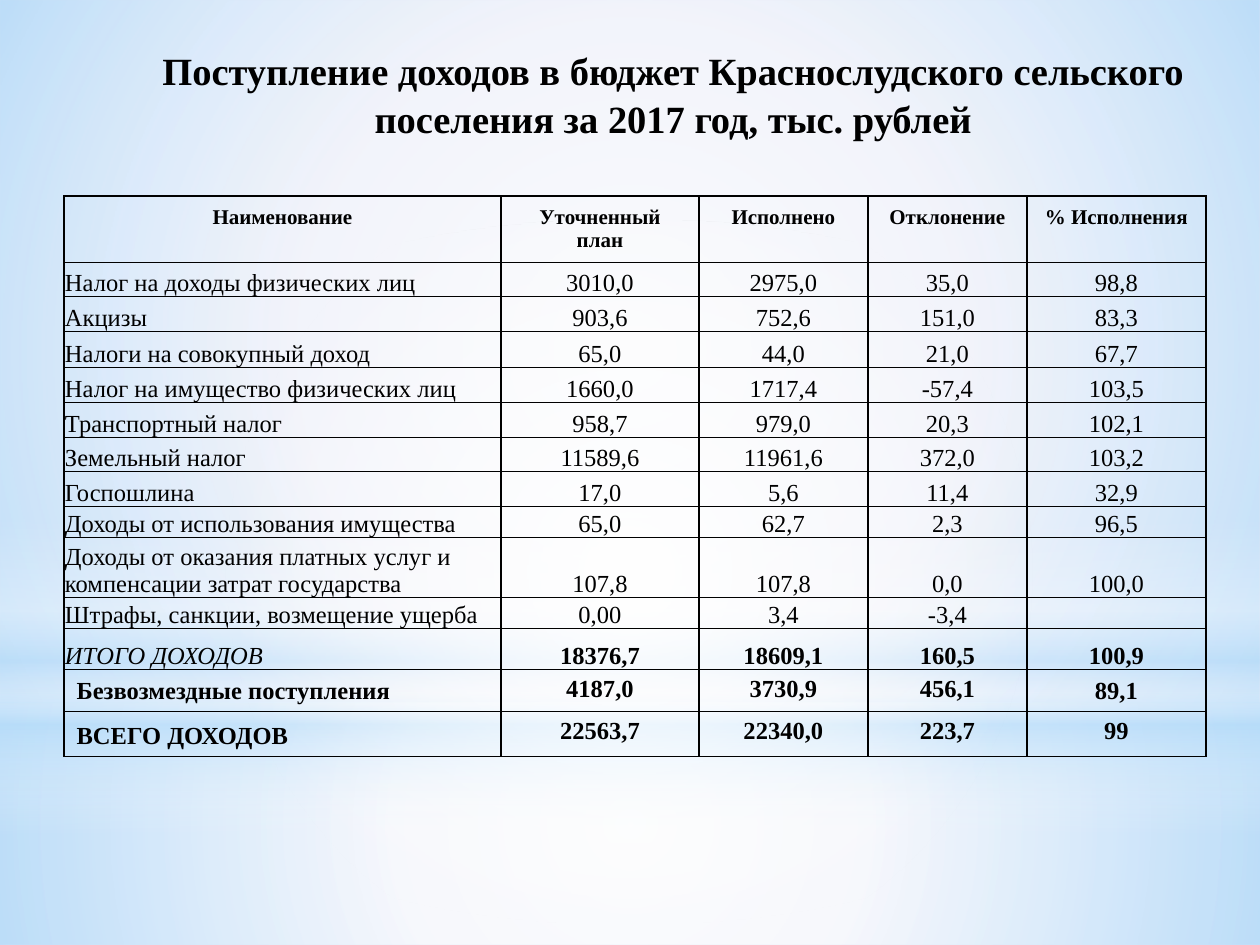
from lxml import etree
from pptx import Presentation
from pptx import util as u
from pptx.dml.color import RGBColor
from pptx.enum import shapes, text
from pptx.oxml import parse_xml
from pptx.oxml.ns import nsdecls, qn

FONT = "Times New Roman"
BLACK = "000000"
COLS = [437, 198, 169, 159, 179]
ROWS = [64, 34, 35, 36, 35, 35, 34, 35, 31, 60, 31, 41, 42, 45]
HEAD = ["Наименование", "Уточненный план", "Исполнено", "Отклонение", "% Исполнения"]
TAXES = [
    ["Налог на доходы физических лиц", "3010,0", "2975,0", "35,0", "98,8"],
    ["Акцизы", "903,6", "752,6", "151,0", "83,3"],
    ["Налоги на совокупный доход", "65,0", "44,0", "21,0", "67,7"],
    ["Налог на имущество физических лиц", "1660,0", "1717,4", "-57,4", "103,5"],
    ["Транспортный налог", "958,7", "979,0", "20,3", "102,1"],
    ["Земельный налог", "11589,6", "11961,6", "372,0", "103,2"],
    ["Госпошлина", "17,0", "5,6", "11,4", "32,9"],
    ["Доходы от использования имущества", "65,0", "62,7", "2,3", "96,5"],
    ["Доходы от оказания платных услуг и компенсации затрат государства",
     "107,8", "107,8", "0,0", "100,0"],
    ["Штрафы, санкции, возмещение ущерба", "0,00", "3,4", "-3,4", ""],
]
SUM = ["ИТОГО ДОХОДОВ", "18376,7", "18609,1", "160,5", "100,9"]
TOTALS = [
    ["Безвозмездные поступления", "4187,0", "3730,9", "456,1", "89,1"],
    ["ВСЕГО ДОХОДОВ", "22563,7", "22340,0", "223,7", "99"],
]


def px(n):
    return u.Emu(round(n * 914400 / 126))


def color(code):
    return RGBColor.from_string(code)


def style(par, size, bold=False, italic=False):
    for run in par.runs:
        font = run.font
        font.name, font.size = FONT, u.Pt(size)
        font.bold, font.italic = bold, italic
        font.color.rgb = color(BLACK)


def glow(slide, kind, box, stops, linear=False):
    """Add a borderless shape with a gradient of (place, colour, opacity) stops."""
    shape = slide.shapes.add_shape(kind, *map(px, box))
    shape.shadow.inherit = False
    shape.line.fill.background()
    shape.fill.background()
    marks = "".join(
        f'<a:gs pos="{pos * 1000}"><a:srgbClr val="{code}">'
        f'<a:alpha val="{alpha * 1000}"/></a:srgbClr></a:gs>'
        for pos, code, alpha in stops)
    course = '<a:lin ang="5400000" scaled="0"/>' if linear else (
        '<a:path path="circle"><a:fillToRect l="50000" t="50000" '
        'r="50000" b="50000"/></a:path>')
    grad = parse_xml(f'<a:gradFill {nsdecls("a")} rotWithShape="1">'
                     f'<a:gsLst>{marks}</a:gsLst>{course}</a:gradFill>')
    props = shape._element.spPr
    props.replace(props.find(qn("a:noFill")), grad)


def backdrop(slide, wide, high):
    fill = slide.background.fill
    fill.solid()
    fill.fore_color.rgb = color("DCE1F4")
    white, blue = "FFFFFF", "B4DCFA"
    rect, oval = shapes.MSO_SHAPE.RECTANGLE, shapes.MSO_SHAPE.OVAL
    split = 703
    glow(slide, rect, (0, split, wide, high - split),
         [(0, white, 91), (37, white, 76), (100, blue, 79)])
    glow(slide, rect, (0, 0, wide, split),
         [(0, white, 89), (48, white, 62), (100, blue, 79)])
    glow(slide, rect, (0, 519, wide, 315),
         [(0, white, 0), (29, white, 30), (45, blue, 40),
          (55, white, 26), (65, blue, 60), (100, white, 0)], linear=True)
    glow(slide, oval, (0, 220, wide, split), [(0, white, 100), (56, white, 0)])


def title(slide, box, words):
    frame = slide.shapes.add_textbox(*map(px, box)).text_frame
    frame.word_wrap = True
    frame.text = words
    par = frame.paragraphs[0]
    par.alignment = text.PP_ALIGN.CENTER
    par.line_spacing = 1.04
    style(par, 22, bold=True)


def border(cell):
    props = cell._tc.get_or_add_tcPr()
    for side in "LRTB":
        props.append(parse_xml(
            f'<a:ln{side} {nsdecls("a")} w="12700"><a:solidFill>'
            f'<a:srgbClr val="{BLACK}"/></a:solidFill></a:ln{side}>'))


def fill_row(cells, words, size=14, bold=False, tight=True, high=()):
    """Write one row; columns listed in high are anchored to the top."""
    for col, (cell, word) in enumerate(zip(cells, words)):
        border(cell)
        cell.fill.background()
        if tight:
            cell.margin_left = cell.margin_right = cell.margin_top = px(1)
            cell.margin_bottom = 0
        cell.vertical_anchor = (text.MSO_ANCHOR.TOP if col in high
                                else text.MSO_ANCHOR.BOTTOM)
        cell.text = word
        par = cell.text_frame.paragraphs[0]
        par.alignment = text.PP_ALIGN.CENTER if col else text.PP_ALIGN.LEFT
        style(par, size, bold)
        if not word:
            etree.SubElement(par._p, qn("a:endParaRPr"), sz=str(size * 100))


def income(slide, left, top):
    table = slide.shapes.add_table(len(ROWS), len(COLS), px(left), px(top),
                                   px(sum(COLS)), px(sum(ROWS))).table
    table.first_row = table.horz_banding = False
    for col, wide in zip(table.columns, COLS):
        col.width = px(wide)
    for row, tall in zip(table.rows, ROWS):
        row.height = px(tall)
    rows = [list(row.cells) for row in table.rows]

    fill_row(rows[0], HEAD, size=12, bold=True, tight=False, high=range(5))
    for cell in rows[0]:
        cell.margin_top = px(10)
    rows[0][0].text_frame.paragraphs[0].alignment = text.PP_ALIGN.CENTER

    for cells, words in zip(rows[1:], TAXES):
        fill_row(cells, words)

    fill_row(rows[-3], SUM, bold=True)
    style(rows[-3][0].text_frame.paragraphs[0], 14, italic=True)

    fill_row(rows[-2], TOTALS[0], bold=True, tight=False, high=(1, 2, 3))
    fill_row(rows[-1], TOTALS[1], bold=True, tight=False, high=(1, 2, 3, 4))


def main():
    deck = Presentation()
    wide, high = 1260, 945
    deck.slide_width, deck.slide_height = px(wide), px(high)
    slide = deck.slides.add_slide(deck.slide_layouts[6])
    backdrop(slide, wide, high)
    title(slide, (98, 39, 1150, 152),
          "Поступление доходов в бюджет Краснослудского сельского "
          "поселения за 2017 год, тыс. рублей")
    income(slide, 64, 196)
    deck.save("out.pptx")


if __name__ == "__main__":
    main()
